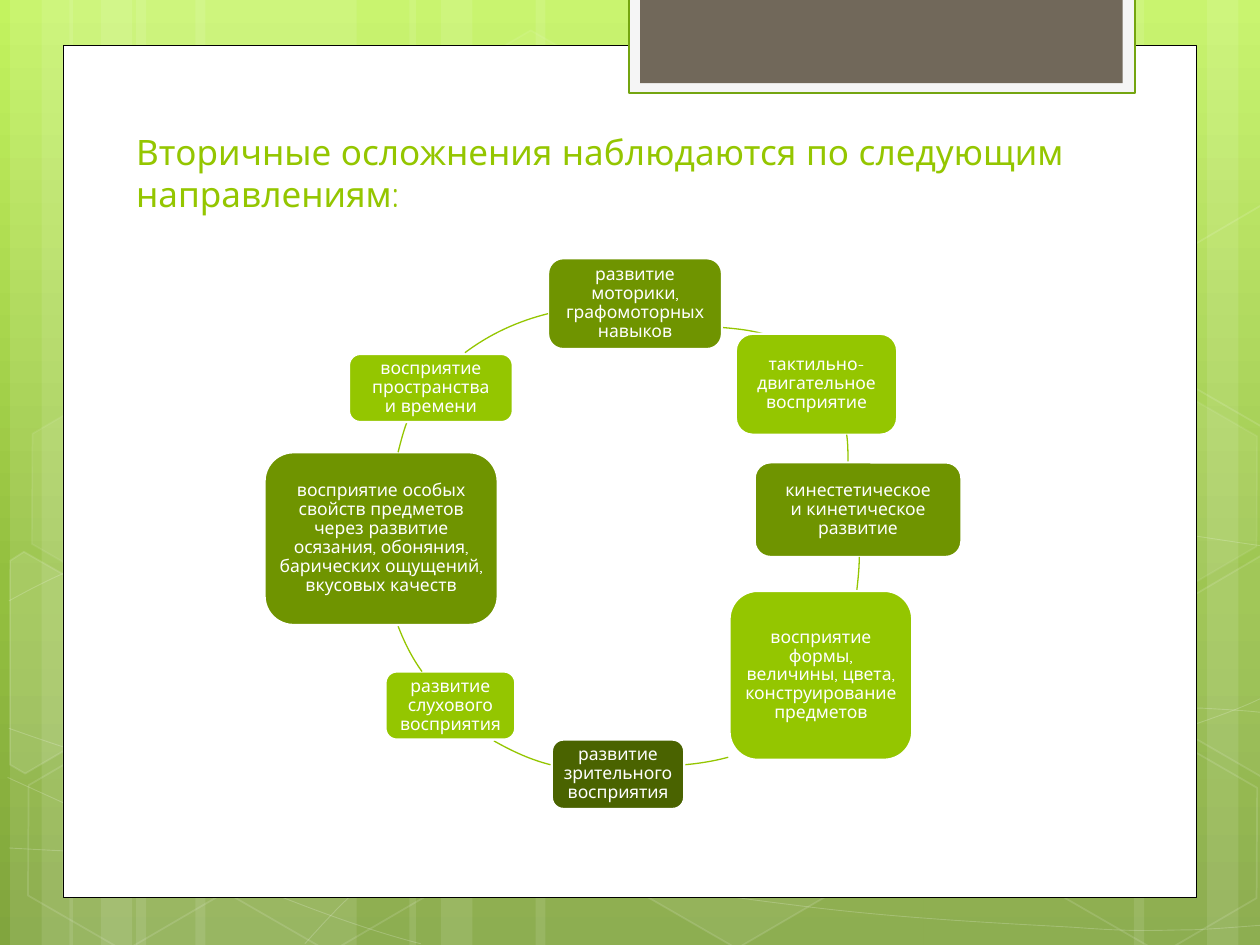
from copy import deepcopy
from math import cos, radians, sin

from lxml import etree
from pptx import Presentation
from pptx import util as u
from pptx.dml.color import RGBColor
from pptx.enum import shapes, text
from pptx.oxml.ns import qn

COLORS = {
    "white": "FFFFFF", "black": "000000", "lime": "94C600",
    "green": "6F9400", "deep": "4A6300", "tab": "71685A",
    "tab_frame": "F5F5F5", "tab_edge": "74A510",
}
BACKDROP = [(0, "C3F35F"), (0.62, "93BF3F"), (1, "81A53E")]
FONT = "Quicksand"
NBSP = chr(160)
TILT = 30
ARC_SIZE = 3.74

# Left and width of the full-height light bands
BANDS = [(1.08, 1.75), (0.08, 0.5), (0.33, 0.83), (1.55, 1.75), (0.55, 0.5), (0.8, 0.83),
         (7.33, 1.75), (9.58, 0.5), (9, 0.83), (4.25, 3.08), (3.25, 0.5), (3.5, 0.83)]

# Box, start point, then stretches: six numbers for a curve, two for a line
WAVES = [
    ((0.07, 5.51, 10, 1.29), (0.07, 6.73), [
        (0.61, 6.76, 1.15, 6.79, 1.9, 6.78), (2.65, 6.77, 3.58, 6.75, 4.58, 6.65),
        (5.58, 6.55, 7, 6.36, 7.92, 6.17), (8.83, 5.98, 9.77, 5.68, 10.07, 5.51)]),
    ((0.07, 3.79, 10, 0.97), (0.07, 4.77), [
        (0.36, 4.61, 0.65, 4.46, 1.21, 4.31), (1.78, 4.16, 2.59, 3.94, 3.47, 3.87),
        (4.36, 3.8, 5.44, 3.79, 6.54, 3.87), (7.64, 3.95, 9.47, 4.26, 10.07, 4.34)]),
    ((0.06, 6.17, 3.29, 1.32), (0.06, 6.17), [(1.27, 6.72, 2.47, 7.27, 3.34, 7.49)]),
    ((0.07, 5.78, 10, 1.62), (0.07, 5.78), [
        (0.38, 5.89, 0.7, 6, 1.28, 6.16), (1.86, 6.31, 2.73, 6.56, 3.57, 6.73),
        (4.4, 6.9, 5.45, 7.08, 6.28, 7.18), (7.11, 7.29, 8, 7.33, 8.53, 7.36),
        (9.05, 7.4, 9.19, 7.38, 9.45, 7.38), (9.71, 7.37, 9.89, 7.35, 10.07, 7.34)]),
    ((2.42, 5.61, 7.64, 1.88), (2.42, 7.49), [
        (2.6, 7.29, 2.78, 7.09, 3.02, 6.91), (3.26, 6.73, 3.6, 6.53, 3.88, 6.39),
        (4.16, 6.25, 4.33, 6.19, 4.7, 6.09), (5.06, 5.99, 5.73, 5.85, 6.08, 5.78),
        (6.44, 5.71, 6.49, 5.71, 6.8, 5.69), (7.11, 5.66, 7.6, 5.63, 7.94, 5.62),
        (8.29, 5.61, 8.86, 5.62, 8.86, 5.62), (9.53, 5.62),
        (9.71, 5.63, 9.88, 5.64, 9.97, 5.65), (10.06, 5.66, 10.03, 5.65, 10.06, 5.66)]),
]

# Left, top, fill opacity (0 for none), line opacity
HEXAGONS = [(3.34, 0.36, 4, 8), (4.97, 5.89, 6, 12), (0.11, 5.91, 0, 12), (0.14, 3.12, 7, 8),
            (1.74, 5.92, 0, 12), (7.53, 4.53, 10, 12), (8.34, 5.93, 0, 12), (8.34, 3.14, 7, 8)]

# Hexagons cut by the slide edge: box before tilting, fill opacity, corners as they show
CUT_HEXAGONS = [
    ((-0.33, 4.59, 1.38, 1.52), 10,
     [(0.08, 4.45), (0.19, 4.38), (0.96, 4.82), (0.95, 5.7), (0.2, 6.14), (0.08, 6.07)]),
    ((9.17, 4.44, 1.36, 1.52), 4,
     [(9.26, 4.85), (10.01, 4.41), (10.09, 4.46), (10.09, 6.13), (10.02, 6.17), (9.26, 5.73)]),
    ((9.17, 1.65, 1.36, 1.52), 0,
     [(9.26, 2.07), (10.01, 1.63), (10.1, 1.68), (10.09, 3.35), (10.02, 3.39), (9.26, 2.95)]),
]

# Wording, box, colour; then the arc to the next node: corner of its circle, start, curve
NODES = [
    ("развитие моторики, графомоторных навыков", (4.35, 2.05, 1.38, 0.72), "green",
     (3.76, 2.6), (5.74, 2.6), (5.85, 2.61, 5.95, 2.62, 6.06, 2.65)),
    ("тактильно-двигательное восприятие", (5.84, 2.65, 1.28, 0.8), "lime",
     (2.99, 1.78), (6.72, 3.45), (6.73, 3.52, 6.73, 3.59, 6.73, 3.67)),
    (f"кинестетическое и{NBSP}кинетическое развитие", (5.99, 3.67, 1.64, 0.75), "green",
     (3.08, 2.52), (6.82, 4.42), (6.82, 4.51, 6.81, 4.6, 6.8, 4.69)),
    ("восприятие формы, величины, цвета, конструирование предметов",
     (5.79, 4.69, 1.45, 1.34), "lime",
     (3.41, 2.34), (5.78, 6.01), (5.67, 6.04, 5.55, 6.06, 5.43, 6.07)),
    ("развитие зрительного восприятия", (4.38, 5.87, 1.05, 0.55), "deep",
     (3.03, 2.41), (4.37, 6.07), (4.21, 6.03, 4.06, 5.96, 3.92, 5.88)),
    ("развитие слухового восприятия", (3.06, 5.33, 1.03, 0.54), "lime",
     (3.03, 2.41), (3.35, 5.33), (3.27, 5.22, 3.21, 5.1, 3.16, 4.97)),
    ("восприятие особых свойств предметов через развитие осязания, обоняния, "
     "барических ощущений, вкусовых качеств", (2.1, 3.59, 1.85, 1.37), "green",
     (3.12, 2.12), (3.16, 3.59), (3.18, 3.51, 3.2, 3.43, 3.23, 3.35)),
    (f"восприятие пространства и{NBSP}времени", (2.77, 2.81, 1.3, 0.54), "lime",
     (2.94, 2.43), (3.69, 2.8), (3.89, 2.65, 4.11, 2.55, 4.35, 2.49)),
]


def rgb(name):
    return RGBColor.from_string(COLORS[name])


def fade(shape, part, percent):
    for color in shape.element.xpath(f"./p:spPr/{part}a:solidFill/a:srgbClr"):
        etree.SubElement(color, qn("a:alpha")).set("val", str(percent * 1000))


def paint(shape, fill=None, line=None, width=1, fill_alpha=100, line_alpha=100):
    shape.shadow.inherit = False
    if fill:
        shape.fill.solid()
        shape.fill.fore_color.rgb = rgb(fill)
    else:
        shape.fill.background()
    if line:
        shape.line.color.rgb = rgb(line)
        shape.line.width = u.Pt(width)
    else:
        shape.line.fill.background()
    if fill_alpha < 100:
        fade(shape, "", fill_alpha)
    if line_alpha < 100:
        fade(shape, "a:ln/", line_alpha)


def add_box(page, kind, box):
    return page.shapes.add_shape(kind, *map(u.Inches, box))


def add_outline(page, box, start, stretches, close=False):
    left, top, width, height = map(u.Inches, box)
    builder = page.shapes.build_freeform(left, top)
    builder.add_line_segments([(left + width, top), (left + width, top + height),
                               (left, top + height)])
    outline = builder.convert_to_shape()
    # Curves go straight into the geometry, measured from the box corner
    track = outline.element.xpath(".//a:custGeom//a:path")[0]
    for child in list(track):
        track.remove(child)
    tags = ["a:moveTo"] + ["a:cubicBezTo" if len(s) == 6 else "a:lnTo" for s in stretches]
    for tag, numbers in zip(tags, [start, *stretches]):
        step = etree.SubElement(track, qn(tag))
        for x, y in zip(numbers[::2], numbers[1::2]):
            point = etree.SubElement(step, qn("a:pt"))
            point.set("x", str(u.Inches(x) - left))
            point.set("y", str(u.Inches(y) - top))
    if close:
        etree.SubElement(track, qn("a:close"))
    return outline


def turn_back(point, box):
    left, top, width, height = box
    mid_x, mid_y = left + width / 2, top + height / 2
    dx, dy, angle = point[0] - mid_x, point[1] - mid_y, radians(-TILT)
    return (mid_x + dx * cos(angle) - dy * sin(angle),
            mid_y + dx * sin(angle) + dy * cos(angle))


def add_span(para, wording, size, color):
    span = para.add_run()
    span.text = wording
    span.font.name, span.font.size = FONT, u.Pt(size)
    span.font.color.rgb = rgb(color)


def draw_backdrop(page, height):
    # Three-stop gradient
    fill = page.background.fill
    fill.gradient()
    fill.gradient_angle = 270
    first = page.element.xpath(".//p:bg//a:gs")[0]
    first.addnext(deepcopy(first))
    for stop, (position, color) in zip(fill.gradient_stops, BACKDROP):
        stop.position = position
        stop.color.rgb = RGBColor.from_string(color)
    # Bands, waves and hexagons
    for left, width in BANDS:
        band = add_box(page, shapes.MSO_SHAPE.RECTANGLE, (left, 0, width, height))
        paint(band, "white", fill_alpha=10)
    for wave in WAVES:
        paint(add_outline(page, *wave), line="white", width=0.5, line_alpha=20)
    for left, top, fill_alpha, line_alpha in HEXAGONS:
        hexagon = add_box(page, shapes.MSO_SHAPE.HEXAGON, (left, top, 1.75, 1.52))
        hexagon.adjustments[0] = 0.285
        hexagon.rotation = TILT
        paint(hexagon, "white" if fill_alpha else None, "white", 1, fill_alpha, line_alpha)
    for box, fill_alpha, corners in CUT_HEXAGONS:
        start, *rest = [turn_back(corner, box) for corner in corners]
        piece = add_outline(page, box, start, rest, close=True)
        piece.rotation = TILT
        paint(piece, "white" if fill_alpha else None, "white", 1, fill_alpha, 12)


def draw_frame(page, box):
    left, top, _, _ = box
    paint(add_box(page, shapes.MSO_SHAPE.RECTANGLE, box), "white", "black", 0.5)
    # Tab hanging from the top edge
    tab = (left + 4.49, top - 0.38, 4.02, 0.76)
    paint(add_box(page, shapes.MSO_SHAPE.RECTANGLE, tab), "tab_frame", "tab_edge", 1.25)
    inner = (tab[0] + 0.09, tab[1], 3.83, 0.68)
    paint(add_box(page, shapes.MSO_SHAPE.RECTANGLE, inner), "tab")


def place_title(page, box, wording):
    title = page.shapes.title
    title.element.getparent().append(title.element)
    title.left, title.top, title.width, title.height = map(u.Inches, box)
    frame = title.text_frame
    frame.word_wrap = True
    frame.auto_size = text.MSO_AUTO_SIZE.NONE
    frame.vertical_anchor = text.MSO_ANCHOR.BOTTOM
    para = frame.paragraphs[0]
    para.alignment = text.PP_ALIGN.LEFT
    add_span(para, wording, 20, "lime")


def draw_node(page, box, wording, color):
    node = add_box(page, shapes.MSO_SHAPE.ROUNDED_RECTANGLE, box)
    paint(node, color, "white", 1.25)
    frame = node.text_frame
    frame.word_wrap = True
    frame.vertical_anchor = text.MSO_ANCHOR.MIDDLE
    frame.margin_left = frame.margin_right = u.Inches(0.04)
    frame.margin_top = frame.margin_bottom = u.Inches(0.04)
    para = frame.paragraphs[0]
    para.alignment = text.PP_ALIGN.CENTER
    para.line_spacing = 0.9
    add_span(para, wording, 10, "white")


def main():
    deck = Presentation()
    deck.slide_width, deck.slide_height = u.Inches(10), u.Inches(7.5)
    page = deck.slides.add_slide(deck.slide_layouts[5])
    draw_backdrop(page, 7.5)
    draw_frame(page, (0.5, 0.36, 9, 6.76))
    place_title(page, (0.98, 0.84, 7.68, 0.91),
                "Вторичные осложнения наблюдаются по следующим направлениям:")
    # Cycle of nodes joined by arcs
    for wording, box, color, corner, start, curve in NODES:
        draw_node(page, box, wording, color)
        arc = add_outline(page, (*corner, ARC_SIZE, ARC_SIZE), start, [curve])
        paint(arc, line="lime", width=0.75)
    deck.save("out.pptx")


if __name__ == "__main__":
    main()
